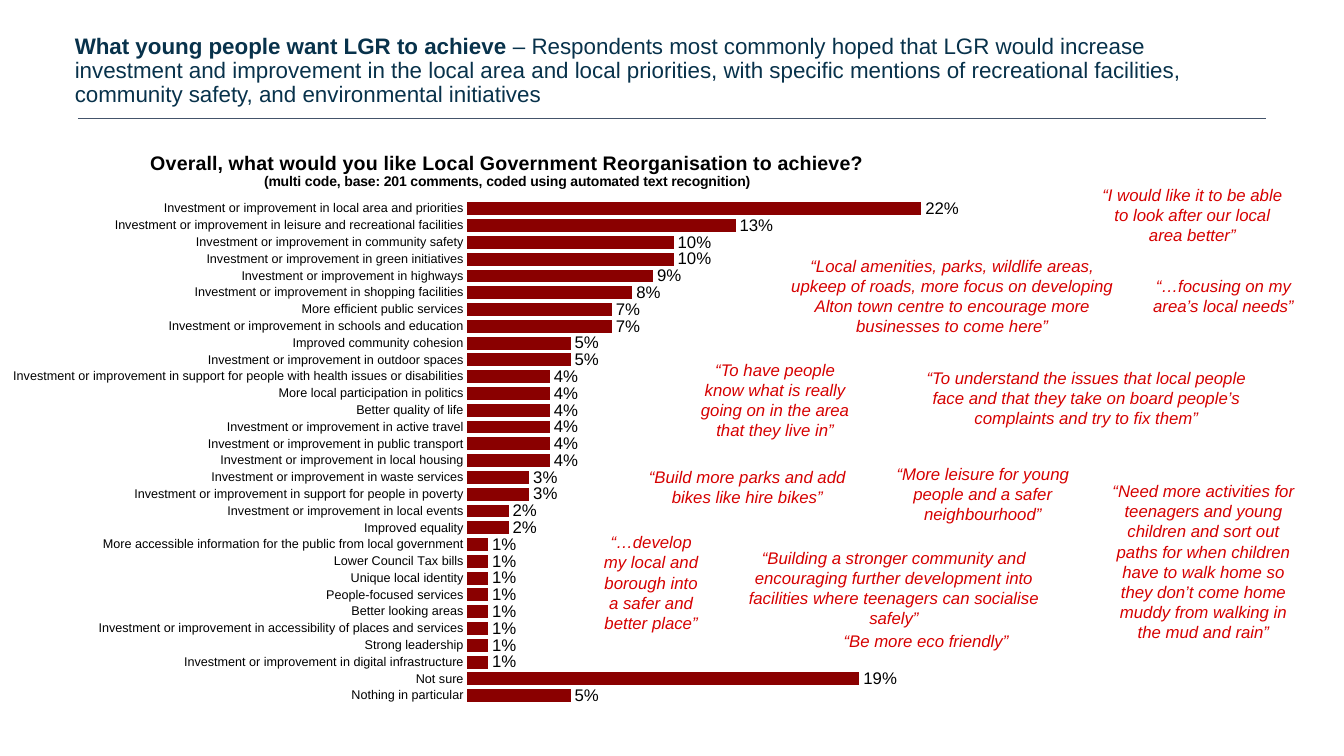
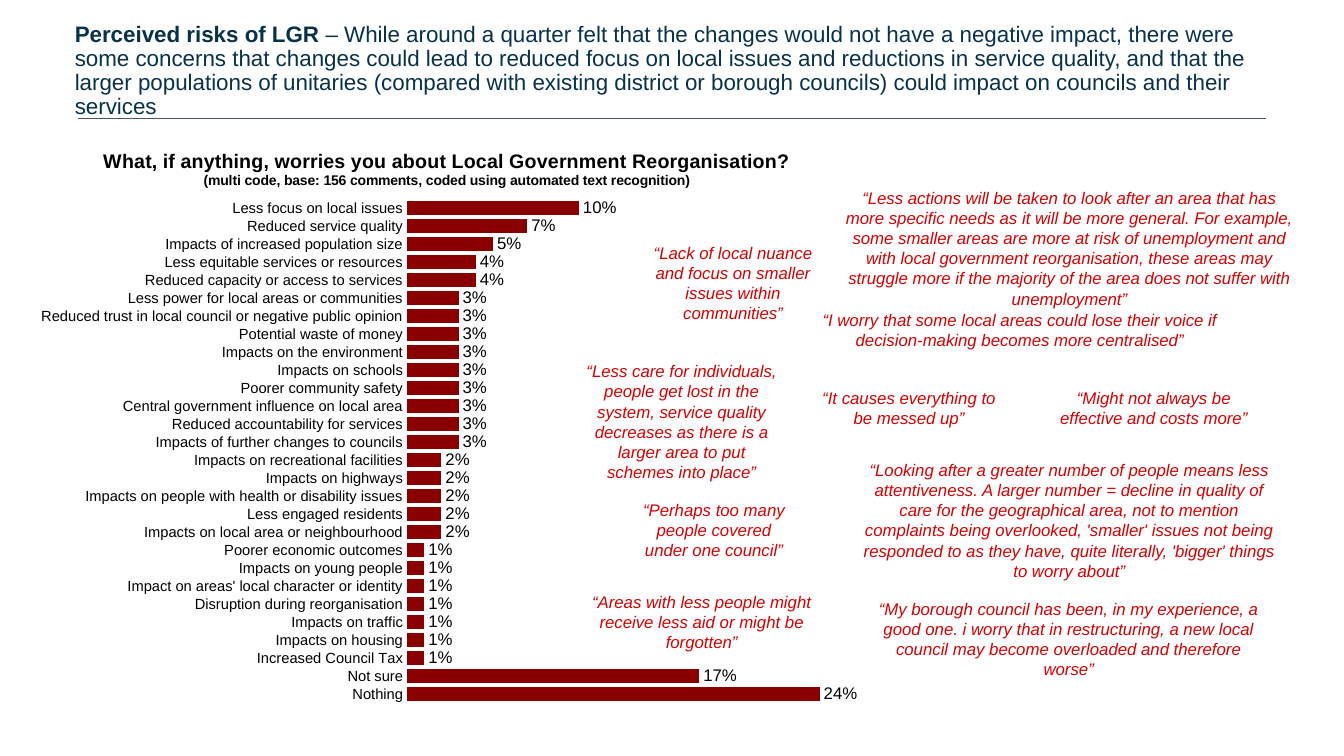
from lxml import etree
from pptx import Presentation
from pptx.chart.data import CategoryChartData as ChartData
from pptx.dml.color import RGBColor as RGB
from pptx.enum.chart import XL_CHART_TYPE as Kind, XL_LABEL_POSITION as Pos, XL_TICK_MARK as Tick
from pptx.enum.shapes import MSO_CONNECTOR as Link
from pptx.enum.text import MSO_ANCHOR as Anchor, MSO_AUTO_SIZE as Fit, PP_ALIGN as Align
from pptx.oxml.ns import qn
from pptx.util import Cm, Pt

COLORS = {"title": "08324B", "rule": "44546A", "bar": "8A0000", "quote": "D60000", "text": "000000"}
PLOT = {"layoutTarget": "inner", "xMode": "edge", "yMode": "edge",
        "x": 0.46, "y": 0.12, "w": 0.52, "h": 0.86}

# Quotes are (left cm, top cm, width cm, lines, text); bars are (percent, label).
SLIDES = [
    {
        "lead": "What young people want LGR to achieve",
        "rest": " – Respondents most commonly hoped that LGR would increase investment and "
                "improvement in the local area and local priorities, with specific mentions of "
                "recreational facilities, community safety, and environmental initiatives",
        "ask": "Overall, what would you like Local Government Reorganisation to achieve?",
        "base": "(multi code, base: 201 comments, coded using automated text recognition)",
        "left": 0.28, "top": 3.28, "size": 9, "max": 0.25,
        "bars": [
            (22, "Investment or improvement in local area and priorities"),
            (13, "Investment or improvement in leisure and recreational facilities"),
            (10, "Investment or improvement in community safety"),
            (10, "Investment or improvement in green initiatives"),
            (9, "Investment or improvement in highways"),
            (8, "Investment or improvement in shopping facilities"),
            (7, "More efficient public services"),
            (7, "Investment or improvement in schools and education"),
            (5, "Improved community cohesion"),
            (5, "Investment or improvement in outdoor spaces"),
            (4, "Investment or improvement in support for people with health issues or disabilities"),
            (4, "More local participation in politics"),
            (4, "Better quality of life"),
            (4, "Investment or improvement in active travel"),
            (4, "Investment or improvement in public transport"),
            (4, "Investment or improvement in local housing"),
            (3, "Investment or improvement in waste services"),
            (3, "Investment or improvement in support for people in poverty"),
            (2, "Investment or improvement in local events"),
            (2, "Improved equality"),
            (1, "More accessible information for the public from local government"),
            (1, "Lower Council Tax bills"),
            (1, "Unique local identity"),
            (1, "People-focused services"),
            (1, "Better looking areas"),
            (1, "Investment or improvement in accessibility of places and services"),
            (1, "Strong leadership"),
            (1, "Investment or improvement in digital infrastructure"),
            (19, "Not sure"),
            (5, "Nothing in particular"),
        ],
        "quotes": [
            (27.51, 4.52, 5.08, 3, "“I would like it to be able to look after our local area better”"),
            (19.53, 6.32, 8.94, 4, "“Local amenities, parks, wildlife areas, upkeep of roads, more focus on "
                                   "developing Alton town centre to encourage more businesses to come here”"),
            (28.75, 6.83, 4.17, 2, "“…focusing on my area’s local needs”"),
            (17.3, 8.94, 4.47, 4, "“To have people know what is really going on in the area that they live in”"),
            (22.91, 9.14, 8.94, 3, "“To understand the issues that local people face and that they take on "
                                   "board people’s complaints and try to fix them”"),
            (15.9, 11.63, 5.87, 2, "“Build more parks and add bikes like hire bikes”"),
            (22, 11.56, 5.54, 3, "“More leisure for young people and a safer neighbourhood”"),
            (27.74, 11.99, 5.18, 8, "“Need more activities for teenagers and young children and sort out paths "
                                    "for when children have to walk home so they don’t come home muddy from "
                                    "walking in the mud and rain”"),
            (14.81, 13.28, 3.2, 5, "“…develop my local and borough into a safer and better place”"),
            (18.06, 13.67, 8.94, 3, "“Building a stronger community and encouraging further development into "
                                    "facilities where teenagers can socialise safely”"),
            (20.75, 15.77, 5.18, 1, "“Be more eco friendly”"),
        ],
    },
    {
        "lead": "Perceived risks of LGR",
        "rest": " – While around a quarter felt that the changes would not have a negative impact, there "
                "were some concerns that changes could lead to reduced focus on local issues and "
                "reductions in service quality, and that the larger populations of unitaries (compared "
                "with existing district or borough councils) could impact on councils and their services",
        "ask": "What, if anything, worries you about Local Government Reorganisation?",
        "base": "(multi code, base: 156 comments, coded using automated text recognition)",
        "left": -1.24, "top": 3.25, "size": 10.5, "max": 0.3,
        "bars": [
            (10, "Less focus on local issues"),
            (7, "Reduced service quality"),
            (5, "Impacts of increased population size"),
            (4, "Less equitable services or resources"),
            (4, "Reduced capacity or access to services"),
            (3, "Less power for local areas or communities"),
            (3, "Reduced trust in local council or negative public opinion"),
            (3, "Potential waste of money"),
            (3, "Impacts on the environment"),
            (3, "Impacts on schools"),
            (3, "Poorer community safety"),
            (3, "Central government influence on local area"),
            (3, "Reduced accountability for services"),
            (3, "Impacts of further changes to councils"),
            (2, "Impacts on recreational facilities"),
            (2, "Impacts on highways"),
            (2, "Impacts on people with health or disability issues"),
            (2, "Less engaged residents"),
            (2, "Impacts on local area or neighbourhood"),
            (1, "Poorer economic outcomes"),
            (1, "Impacts on young people"),
            (1, "Impact on areas' local character or identity"),
            (1, "Disruption during reorganisation"),
            (1, "Impacts on traffic"),
            (1, "Impacts on housing"),
            (1, "Increased Council Tax"),
            (17, "Not sure"),
            (24, "Nothing"),
        ],
        "quotes": [
            (21.01, 4.6, 11.89, 5, "“Less actions will be taken to look after an area that has more specific "
                                   "needs as it will be more general. For example, some smaller areas are more "
                                   "at risk of unemployment and with local government reorganisation, these "
                                   "areas may struggle more if the majority of the area does not suffer with "
                                   "unemployment”"),
            (21.69, 14.96, 10.49, 3, "“My borough council has been, in my experience, a good one. i worry that "
                                     "in restructuring, a new local council may become overloaded and "
                                     "therefore worse”"),
            (20.37, 9.65, 5.08, 2, "“It causes everything to be messed up”"),
            (14.45, 8.97, 5.46, 6, "“Less care for individuals, people get lost in the system, service quality "
                                   "decreases as there is a larger area to put schemes into place”"),
            (15.95, 5.99, 5.05, 4, "“Lack of local nuance and focus on smaller issues within communities”"),
            (19.89, 7.67, 11.63, 2, "“I worry that some local areas could lose their voice if decision-making "
                                    "becomes more centralised”"),
            (14, 14.78, 7.37, 2, "“Areas with less people might receive less aid or might be forgotten”"),
            (21.36, 11.46, 11.18, 5, "“Looking after a greater number of people means less attentiveness. A "
                                     "larger number = decline in quality of care for the geographical area, "
                                     "not to mention complaints being overlooked, 'smaller' issues not being "
                                     "responded to as they have, quite literally, 'bigger' things to worry "
                                     "about”"),
            (15.9, 12.47, 4.19, 3, "“Perhaps too many people covered under one council”"),
            (26.26, 9.65, 5.64, 2, "“Might not always be effective and costs more”"),
        ],
    },
]


def style(font, size, color, bold=False, italic=False):
    font.name, font.size, font.bold, font.italic = "Arial", Pt(size), bold, italic
    font.color.rgb = RGB.from_string(COLORS[color])


def add_run(para, text, *look, **flags):
    run = para.add_run()
    run.text = text
    style(run.font, *look, **flags)


deck = Presentation()
deck.slide_width, deck.slide_height = Cm(33.87), Cm(19.05)

for page in SLIDES:
    slide = deck.slides.add_slide(deck.slide_layouts[5])
    shapes = slide.shapes

    title = shapes.title
    title.left, title.top, title.width, title.height = Cm(1.63), Cm(-0.05), Cm(30.3), Cm(3.68)
    frame = title.text_frame
    frame.word_wrap, frame.auto_size = True, Fit.NONE
    frame.vertical_anchor = Anchor.MIDDLE
    para = frame.paragraphs[0]
    para.alignment, para.line_spacing = Align.LEFT, 0.9
    add_run(para, page["lead"], 16, "title", bold=True)
    add_run(para, page["rest"], 16, "title")

    rule = shapes.add_connector(Link.STRAIGHT, Cm(1.96), Cm(2.97), Cm(31.9), Cm(2.97))
    rule.line.color.rgb = RGB.from_string(COLORS["rule"])
    rule.line.width = Pt(0.5)
    etree.SubElement(rule.line._get_or_add_ln().getparent(), qn("a:effectLst"))

    data = ChartData(number_format="0%")
    data.categories = [label for _, label in page["bars"]]
    data.add_series("Series 1", [num / 100 for num, _ in page["bars"]])
    chart = shapes.add_chart(Kind.BAR_CLUSTERED, Cm(page["left"]), Cm(page["top"]),
                             Cm(25), Cm(14.76), data).chart
    style(chart.font, 10, "text")
    chart.has_legend = False
    head = chart.chart_title.text_frame
    add_run(head.paragraphs[0], page["ask"], 14, "text", bold=True)
    add_run(head.add_paragraph(), page["base"], 10, "text", bold=True)
    chart.chart_title.include_in_layout = False

    area = chart._chartSpace.chart.plotArea
    for old in area.findall(qn("c:layout")):
        area.remove(old)
    layout = etree.Element(qn("c:layout"))
    manual = etree.SubElement(layout, qn("c:manualLayout"))
    for tag, val in PLOT.items():
        etree.SubElement(manual, qn("c:" + tag)).set("val", str(val))
    area.insert(0, layout)

    cats = chart.category_axis
    cats.reverse_order = True
    cats.major_tick_mark = cats.minor_tick_mark = Tick.NONE
    cats.has_major_gridlines = False
    cats.format.line.fill.background()
    style(cats.tick_labels.font, page["size"], "text")
    vals = chart.value_axis
    vals.minimum_scale, vals.maximum_scale = 0, page["max"]
    vals.has_major_gridlines = vals.visible = False

    plot = chart.plots[0]
    plot.gap_width, plot.vary_by_categories = 30, False
    bars = plot.series[0]
    bars.invert_if_negative = False
    bars.format.fill.solid()
    bars.format.fill.fore_color.rgb = RGB.from_string(COLORS["bar"])
    tags = bars.data_labels
    tags.show_value, tags.position = True, Pos.OUTSIDE_END
    tags.number_format, tags.number_format_is_linked = "0%", False
    style(tags.font, 12, "text")

    for left, top, width, lines, text in page["quotes"]:
        box = shapes.add_textbox(Cm(left), Cm(top), Cm(width), Cm(0.51 * lines + 0.25))
        frame = box.text_frame
        frame.word_wrap, frame.auto_size = True, Fit.SHAPE_TO_FIT_TEXT
        para = frame.paragraphs[0]
        para.alignment = Align.CENTER
        add_run(para, text, 12, "quote", italic=True)

deck.save("out.pptx")
